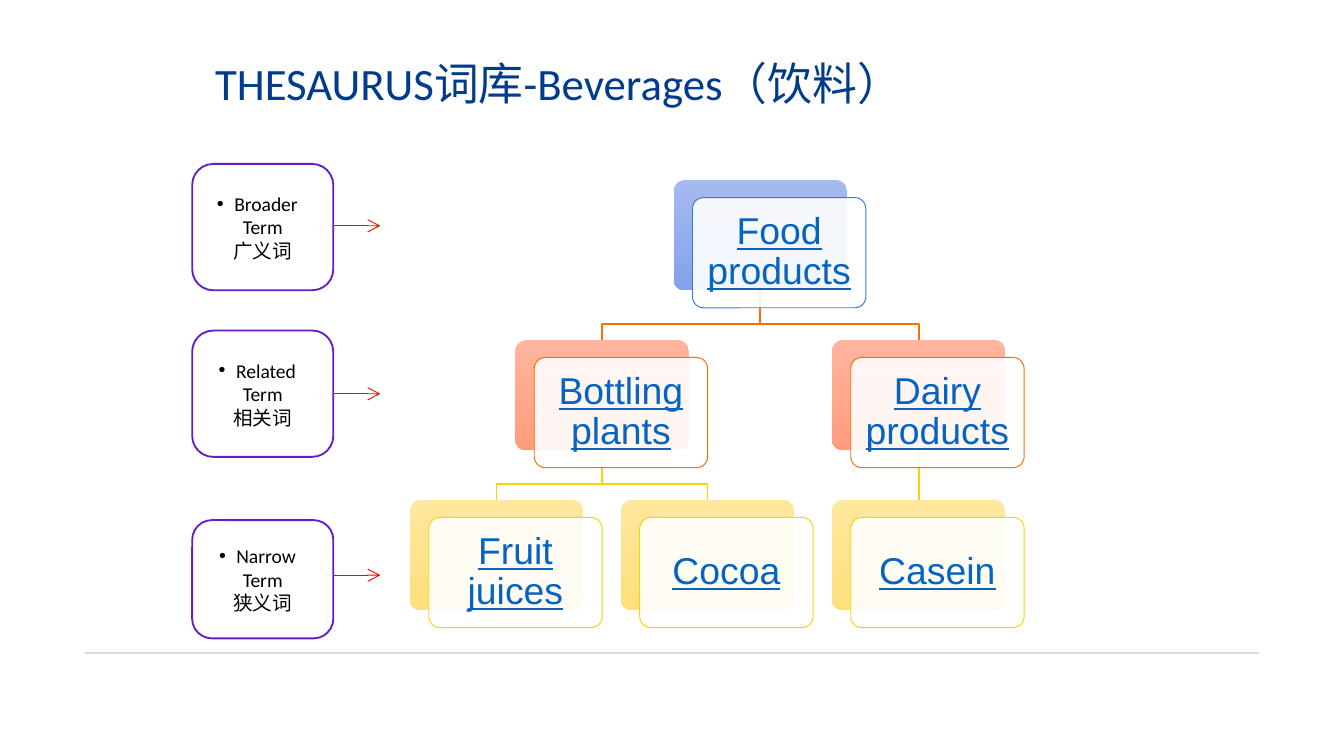
"""Build a thesaurus slide with term boxes and a tree of topics."""
import pptx
import pptx.util
import pptx.dml.color
import pptx.enum.shapes
import pptx.enum.text
import pptx.oxml
import pptx.oxml.ns

Inches = pptx.util.Inches
Pt = pptx.util.Pt
Shape = pptx.enum.shapes.MSO_SHAPE
Align = pptx.enum.text.PP_ALIGN
Anchor = pptx.enum.text.MSO_ANCHOR
qn = pptx.oxml.ns.qn

HUES = {
    "title": "003C8B", "rule": "DCDCDC", "term": "661CC9", "arrow": "FF0000",
    "black": "000000", "white": "FFFFFF", "link": "0563C1",
}
LEVELS = [
    {"top": "A5BAEF", "end": "83A2ED", "edge": "3678DF"},
    {"top": "FFB59E", "end": "FF9C7C", "edge": "FF6C00"},
    {"top": "FFE79E", "end": "FFDF7C", "edge": "FCD300"},
]
TERMS = [
    ("Narrow Term\v狭义词", 3.87, 0.88, 4.28),
    ("Related Term\v相关词", 2.46, 0.94, 2.93),
    ("Broader\vTerm\v广义词", 1.22, 0.94, 1.68),
]
NODES = {
    "Food products": (1.25, 0, None),
    "Bottling plants": (0.5, 1, "Food products"),
    "Fruit juices": (0, 2, "Bottling plants"),
    "Cocoa": (1, 2, "Bottling plants"),
    "Dairy products": (2, 1, "Food products"),
    "Casein": (2, 2, "Dairy products"),
}
WIDE, HIGH = 1.29, 0.82


def tint(hue):
    """Turn a hex string into a colour."""
    return pptx.dml.color.RGBColor.from_string(hue)


def style(par, face, size, hue):
    """Format each run of a paragraph."""
    for run in par.runs:
        run.font.name = face
        run.font.size = Pt(size)
        run.font.color.rgb = tint(hue)


def add_title(slide, text):
    """Place and format the title."""
    title = slide.shapes.title
    title.left, title.top = Inches(1.5), Inches(0.38)
    title.width, title.height = Inches(7.25), Inches(0.47)
    frame = title.text_frame
    frame.text = text
    frame.margin_top = frame.margin_bottom = 0
    frame.vertical_anchor = Anchor.MIDDLE
    frame.paragraphs[0].alignment = Align.LEFT
    style(frame.paragraphs[0], "Calibri", 24, HUES["title"])


def add_line(slide, x, y, end, hue, width, head=False):
    """Draw a level line, with an arrowhead if asked."""
    line = slide.shapes.add_connector(
        pptx.enum.shapes.MSO_CONNECTOR.STRAIGHT,
        Inches(x), Inches(y), Inches(end), Inches(y))
    line.line.color.rgb = tint(hue)
    line.line.width = Pt(width)
    if head:
        tail = pptx.oxml.parse_xml(
            f'<a:tailEnd {pptx.oxml.ns.nsdecls("a")} type="arrow"/>')
        line.line._get_or_add_ln().append(tail)
    props = line._element.spPr
    props.append(props.makeelement(qn("a:effectLst"), {}))


def add_box(slide, x, y, wide, high):
    """Add a round box with no shadow."""
    box = slide.shapes.add_shape(
        Shape.ROUNDED_RECTANGLE,
        Inches(x), Inches(y), Inches(wide), Inches(high))
    box.shadow.inherit = False
    return box


def paint(box, edge, width):
    """Give a box a white fill and a coloured edge."""
    box.fill.solid()
    box.fill.fore_color.rgb = tint(HUES["white"])
    box.line.color.rgb = tint(edge)
    box.line.width = Pt(width)


def add_term(slide, text, y, high):
    """Add a term box with a bullet."""
    box = add_box(slide, 1.43, y, 1.05, high)
    paint(box, HUES["term"], 1)
    frame = box.text_frame
    frame.word_wrap = True
    frame.vertical_anchor = Anchor.MIDDLE
    par = frame.paragraphs[0]
    par.text = text
    par.alignment = Align.CENTER
    props = par._p.get_or_add_pPr()
    props.set("marL", "0")
    props.set("indent", str(-Inches(0.13)))
    props.append(props.makeelement(qn("a:buFont"), {"typeface": "Arial"}))
    props.append(props.makeelement(qn("a:buChar"), {"char": "•"}))
    par.font.size = Pt(10.5)
    par.font.color.rgb = tint(HUES["black"])
    style(par, "Calibri", 10.5, HUES["black"])


def place(col, level):
    """Find the top left corner of a node."""
    return 3.05 + 1.57 * col, 1.34 + 1.19 * level


def add_link(slide, col, level, root):
    """Join a node to the one above it."""
    x, y = place(col, level)
    top_x, top_y = place(*NODES[root][:2])
    x, top_x = x + WIDE / 2, top_x + WIDE / 2
    bend = y - 0.12
    points = [(x, y)]
    if x != top_x:
        points = [(top_x, bend), (x, bend), (x, y)]
    pen = slide.shapes.build_freeform(
        Inches(top_x), Inches(top_y + HIGH), scale=1.0)
    pen.add_line_segments(
        [(Inches(a), Inches(b)) for a, b in points], close=False)
    link = pen.convert_to_shape()
    link.shadow.inherit = False
    link.fill.background()
    link.line.color.rgb = tint(LEVELS[level]["edge"])
    link.line.width = Pt(1)


def add_node(slide, text, col, level):
    """Add a shaded back and a clear card with text."""
    x, y = place(col, level)
    hues = LEVELS[level]
    back = add_box(slide, x, y, WIDE, HIGH)
    back.fill.gradient()
    back.fill.gradient_angle = 270
    for stop, key in zip(back.fill.gradient_stops, ("top", "end")):
        stop.color.rgb = tint(hues[key])
    back.line.fill.background()
    card = add_box(slide, x + 0.14, y + 0.13, WIDE, HIGH)
    paint(card, hues["edge"], 0.5)
    clear = card._element.spPr.find(qn("a:solidFill"))[0]
    clear.append(clear.makeelement(qn("a:alpha"), {"val": "90000"}))
    for box in (back, card):
        box.adjustments[0] = 0.1
    frame = card.text_frame
    frame.word_wrap = True
    frame.vertical_anchor = Anchor.MIDDLE
    frame.margin_left = frame.margin_right = Inches(0.08)
    frame.margin_top = frame.margin_bottom = Inches(0.08)
    par = frame.paragraphs[0]
    par.text = text
    par.alignment = Align.CENTER
    par.line_spacing = 0.9
    style(par, "Arial", 20, HUES["link"])
    par.runs[0].font.underline = True


def main():
    """Build and save the slide."""
    deck = pptx.Presentation()
    deck.slide_width = Inches(10)
    deck.slide_height = deck.slide_width * 9 // 16
    slide = deck.slides.add_slide(deck.slide_layouts[5])
    add_line(slide, 0.63, 4.86, 9.37, HUES["rule"], 1)
    add_title(slide, "THESAURUS词库-Beverages（饮料）")
    for text, y, high, mid in TERMS:
        add_term(slide, text, y, high)
    for text, y, high, mid in TERMS:
        add_line(slide, 2.48, mid, 2.83, HUES["arrow"], 0.5, True)
    for col, level, root in NODES.values():
        if root:
            add_link(slide, col, level, root)
    for text, (col, level, root) in NODES.items():
        add_node(slide, text, col, level)
    deck.save("out.pptx")


if __name__ == "__main__":
    main()
